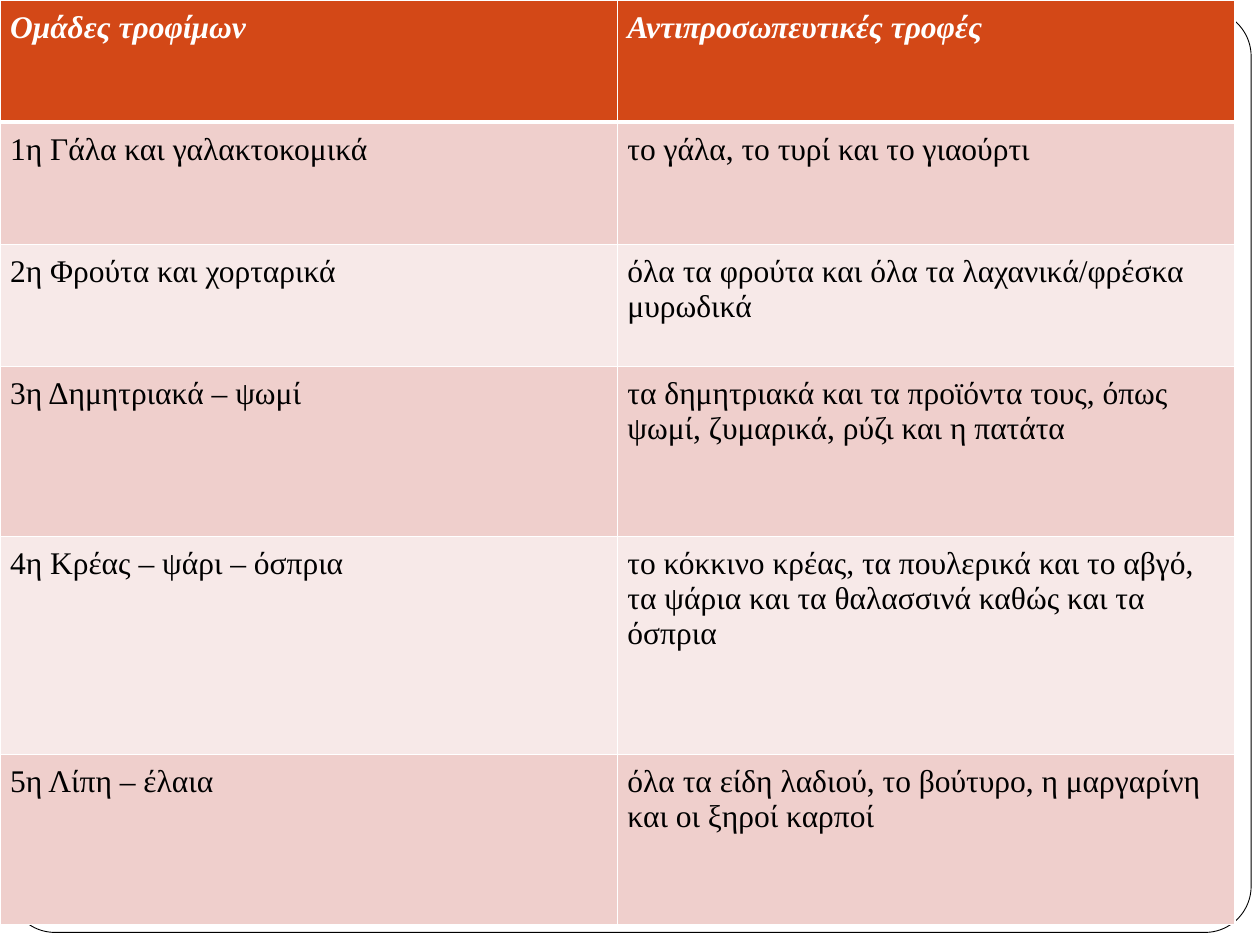
from lxml import etree
from pptx import Presentation
from pptx.dml.color import RGBColor
from pptx.enum.shapes import MSO_SHAPE
from pptx.oxml.ns import qn
from pptx.util import Inches, Pt

ROUNDED = MSO_SHAPE.ROUNDED_RECTANGLE
FONT = "Times New Roman"
COLORS = {
    "white": "FFFFFF",
    "black": "000000",
    "header": "D34817",
    "odd": "EFCFCC",
    "even": "F7E9E8",
}
ROW_HEIGHTS = [0.97, 0.97, 0.97, 1.35, 1.73, 1.35]
COLUMN_WIDTH = 4.9
FOOD_GROUPS = [
    ("Ομάδες τροφίμων", "Αντιπροσωπευτικές τροφές"),
    ("1η Γάλα και γαλακτοκομικά", "το γάλα, το τυρί και το γιαούρτι"),
    ("2η Φρούτα και χορταρικά",
     "όλα τα φρούτα και όλα τα λαχανικά/φρέσκα μυρωδικά"),
    ("3η Δημητριακά – ψωμί",
     "τα δημητριακά και τα προϊόντα τους, όπως ψωμί, ζυμαρικά, ρύζι και η πατάτα"),
    ("4η Κρέας – ψάρι – όσπρια",
     "το κόκκινο κρέας, τα πουλερικά και το αβγό, τα ψάρια και τα θαλασσινά "
     "καθώς και τα όσπρια"),
    ("5η Λίπη – έλαια",
     "όλα τα είδη λαδιού, το βούτυρο, η μαργαρίνη και οι ξηροί καρποί"),
]


def color(name):
    return RGBColor.from_string(COLORS[name])


def add_border(cell, side, width):
    """Add one white cell border; borders must come before the cell fill."""
    properties = cell._tc.get_or_add_tcPr()
    line = etree.SubElement(properties, qn(f"a:{side}"), w=str(Pt(width)))
    fill = etree.SubElement(line, qn("a:solidFill"))
    etree.SubElement(fill, qn("a:srgbClr"), val=COLORS["white"])


presentation = Presentation()
presentation.slide_width = Inches(10)
presentation.slide_height = Inches(7.5)
slide = presentation.slides.add_slide(presentation.slide_layouts[6])

# Rounded frame behind the table
frame = slide.shapes.add_shape(
    ROUNDED, Inches(0.07), Inches(0.08), Inches(9.86), Inches(7.32))
frame.adjustments[0] = 0.05
frame.shadow.inherit = False
frame.fill.solid()
frame.fill.fore_color.rgb = color("white")
frame.line.color.rgb = color("black")
frame.line.width = Pt(0.5)

# Food group table
table = slide.shapes.add_table(
    len(FOOD_GROUPS), 2, 0, 0,
    Inches(2 * COLUMN_WIDTH), Inches(sum(ROW_HEIGHTS))).table
for column in table.columns:
    column.width = Inches(COLUMN_WIDTH)

for row_index, texts in enumerate(FOOD_GROUPS):
    table.rows[row_index].height = Inches(ROW_HEIGHTS[row_index])
    is_header = row_index == 0
    band = "header" if is_header else ("odd" if row_index % 2 else "even")
    for column_index, text in enumerate(texts):
        cell = table.cell(row_index, column_index)
        cell.margin_left = cell.margin_right = Inches(0.08)
        cell.margin_top = cell.margin_bottom = Inches(0.08)
        for side in ("lnL", "lnR", "lnT", "lnB"):
            add_border(cell, side, 3 if is_header and side == "lnB" else 1)
        cell.fill.solid()
        cell.fill.fore_color.rgb = color(band)

        run = cell.text_frame.paragraphs[0].add_run()
        run.text = text
        run.font.name = FONT
        run.font.size = Pt(18)
        run.font.bold = is_header
        run.font.italic = is_header
        run.font.color.rgb = color("white" if is_header else "black")

presentation.save("out.pptx")
